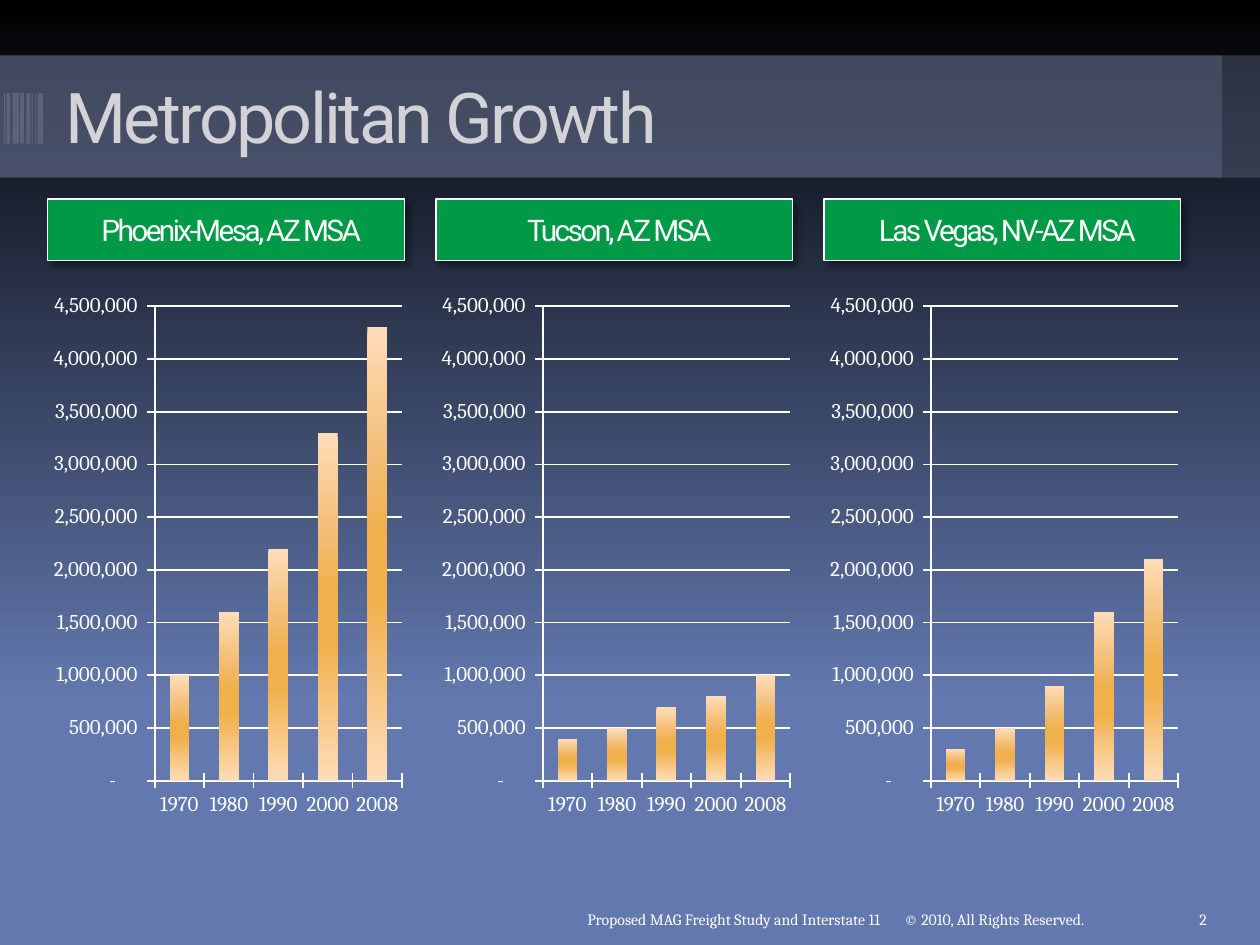
"""Build the Metropolitan Growth slide with three population charts."""
from lxml import etree
from pptx import Presentation
from pptx.chart.data import CategoryChartData
from pptx.dml.color import RGBColor
from pptx.enum.chart import XL_CHART_TYPE, XL_TICK_MARK
from pptx.enum.shapes import MSO_SHAPE
from pptx.enum.text import MSO_ANCHOR, PP_ALIGN
from pptx.oxml.ns import qn
from pptx.util import Inches, Pt

COLUMN = XL_CHART_TYPE.COLUMN_CLUSTERED
CROSS = XL_TICK_MARK.CROSS
RECTANGLE = MSO_SHAPE.RECTANGLE
MIDDLE, BOTTOM = MSO_ANCHOR.MIDDLE, MSO_ANCHOR.BOTTOM
LEFT, CENTER, RIGHT = PP_ALIGN.LEFT, PP_ALIGN.CENTER, PP_ALIGN.RIGHT

WHITE = "FFFFFF"
HEADING_FONT, BODY_FONT = "Roboto", "Cambria"
BACKGROUND_STOPS = [(0, "000000"), (74, "6278AE")]
BAR_STOPS = [(0, "FFDDB8"), (30, "F2BC72"), (45, "F0B04C"), (60, "F0B04C"), (100, "FFDDB8")]
NUMBER_FORMAT = '_(* #,##0_);_(* \\(#,##0\\);_(* "-"??_);_('

TITLE = "Metropolitan Growth"
YEARS = ["1970", "1980", "1990", "2000", "2008"]
REGIONS = [
    ("Phoenix-Mesa, AZ MSA", [1000000, 1600000, 2200000, 3300000, 4300000]),
    ("Tucson, AZ MSA", [400000, 500000, 700000, 800000, 1000000]),
    ("Las Vegas, NV-AZ MSA", [300000, 500000, 900000, 1600000, 2100000]),
]
BAND_WIDTHS = [10, 9.7]
STRIPES = [(0.03, 0.01), (0.05, 0.03), (0.1, 0.05), (0.16, 0.03),
           (0.21, 0.03), (0.25, 0.01), (0.28, 0.01), (0.3, 0.04)]
FOOTERS = [
    ("Proposed MAG Freight Study and Interstate 11", 1, 6.08, RIGHT),
    ("© 2010, All Rights Reserved.", 7.08, 2.33, LEFT),
    ("2", 9.42, 0.5, LEFT),
]
FIRST_LEFT, COLUMN_STEP = 0.38, 3.08


def color(value):
    return RGBColor.from_string(value)


def add_child(parent, tag, **attributes):
    return etree.SubElement(parent, qn(tag), attributes)


def set_gradient(fill, element, stops):
    """Fill from top to bottom with the given stops."""
    fill.gradient()
    fill.gradient_angle = 270
    stop_list = element.find(".//" + qn("a:gsLst"))
    for stop in list(stop_list):
        stop_list.remove(stop)
    for position, value in stops:
        stop = add_child(stop_list, "a:gs", pos=str(position * 1000))
        add_child(stop, "a:srgbClr", val=value)


def add_rectangle(slide, left, top, width, height, fill, alpha=100):
    shape = slide.shapes.add_shape(
        RECTANGLE, Inches(left), Inches(top), Inches(width), Inches(height))
    shape.shadow.inherit = False
    shape.fill.solid()
    shape.fill.fore_color.rgb = color(fill)
    shape.line.fill.background()
    if alpha < 100:
        fill_color = shape._element.spPr.find(".//" + qn("a:srgbClr"))
        add_child(fill_color, "a:alpha", val=str(alpha * 1000))
    return shape


def write_text(shape, text, size, font, value, align, anchor, spacing=0):
    frame = shape.text_frame
    frame.word_wrap = True
    frame.vertical_anchor = anchor
    paragraph = frame.paragraphs[0]
    paragraph.alignment = align
    run = paragraph.add_run()
    run.text = text
    run.font.size = Pt(size)
    run.font.name = font
    run.font.color.rgb = color(value)
    if spacing:
        run.font._element.set("spc", str(int(spacing * 100)))
    return paragraph


def add_header(slide, text, left):
    header = add_rectangle(slide, left, 1.58, 2.83, 0.49, "009A46")
    header.line.color.rgb = color(WHITE)
    header.line.width = Pt(0.75)
    effects = header._element.spPr.find(qn("a:effectLst"))
    shadow = add_child(effects, "a:outerShdw", blurRad="50800", dist="38100",
                       dir="2700000", algn="tl", rotWithShape="0")
    shadow_color = add_child(shadow, "a:srgbClr", val="000000")
    add_child(shadow_color, "a:alpha", val="40000")
    paragraph = write_text(header, text, 17, HEADING_FONT, WHITE, CENTER, MIDDLE, -1.5)
    paragraph._p.get_or_add_pPr().set("marL", str(Inches(0.08)))


def style_line(line):
    line.color.rgb = color(WHITE)
    line.width = Pt(1)


def add_growth_chart(slide, values, left):
    data = CategoryChartData(number_format="General")
    data.categories = YEARS
    data.add_series("Series 1", values)
    chart = slide.shapes.add_chart(
        COLUMN, Inches(left), Inches(2.25), Inches(2.92), Inches(4.32), data).chart
    chart.has_legend = False
    chart.has_title = False
    chart.font.size = Pt(18)
    chart.font.name = BODY_FONT
    chart.font.color.rgb = color(WHITE)
    for axis in (chart.category_axis, chart.value_axis):
        axis.major_tick_mark = CROSS
        axis.tick_labels.font.size = Pt(12)
        axis.tick_labels.font.name = BODY_FONT
        axis.tick_labels.font.color.rgb = color(WHITE)
        style_line(axis.format.line)
    value_axis = chart.value_axis
    value_axis.minimum_scale = 0
    value_axis.maximum_scale = 4500000
    value_axis.major_unit = 500000
    value_axis.has_major_gridlines = True
    style_line(value_axis.major_gridlines.format.line)
    value_axis.tick_labels.number_format = NUMBER_FORMAT
    value_axis.tick_labels.number_format_is_linked = False
    plot = chart.plots[0]
    plot.vary_by_categories = False
    plot.gap_width = 150
    series = plot.series[0]
    set_gradient(series.format.fill, series._element, BAR_STOPS)


def main():
    presentation = Presentation()
    presentation.slide_width, presentation.slide_height = Inches(10), Inches(7.5)
    slide = presentation.slides.add_slide(presentation.slide_layouts[5])
    set_gradient(slide.background.fill, slide._element, BACKGROUND_STOPS)

    title = slide.shapes.title
    title.left, title.top = Inches(0.42), Inches(0.42)
    title.width, title.height = Inches(8.5), Inches(1)
    write_text(title, TITLE, 40, HEADING_FONT, "D3D3D7", LEFT, MIDDLE, -1.5)

    for width in BAND_WIDTHS:
        add_rectangle(slide, 0, 0.44, width, 0.97, "626E8D", 40)
    for left, width in STRIPES:
        add_rectangle(slide, left, 0.74, width, 0.4, "5A6378")
    slide.shapes._spTree.append(title._element)

    for index, (name, values) in enumerate(REGIONS):
        left = FIRST_LEFT + index * COLUMN_STEP
        add_header(slide, name, left)
        add_growth_chart(slide, values, left - 0.05)

    for text, left, width, align in FOOTERS:
        box = slide.shapes.add_textbox(Inches(left), Inches(7.02), Inches(width), Inches(0.4))
        write_text(box, text, 9, BODY_FONT, WHITE, align, BOTTOM)

    presentation.save("out.pptx")


if __name__ == "__main__":
    main()
